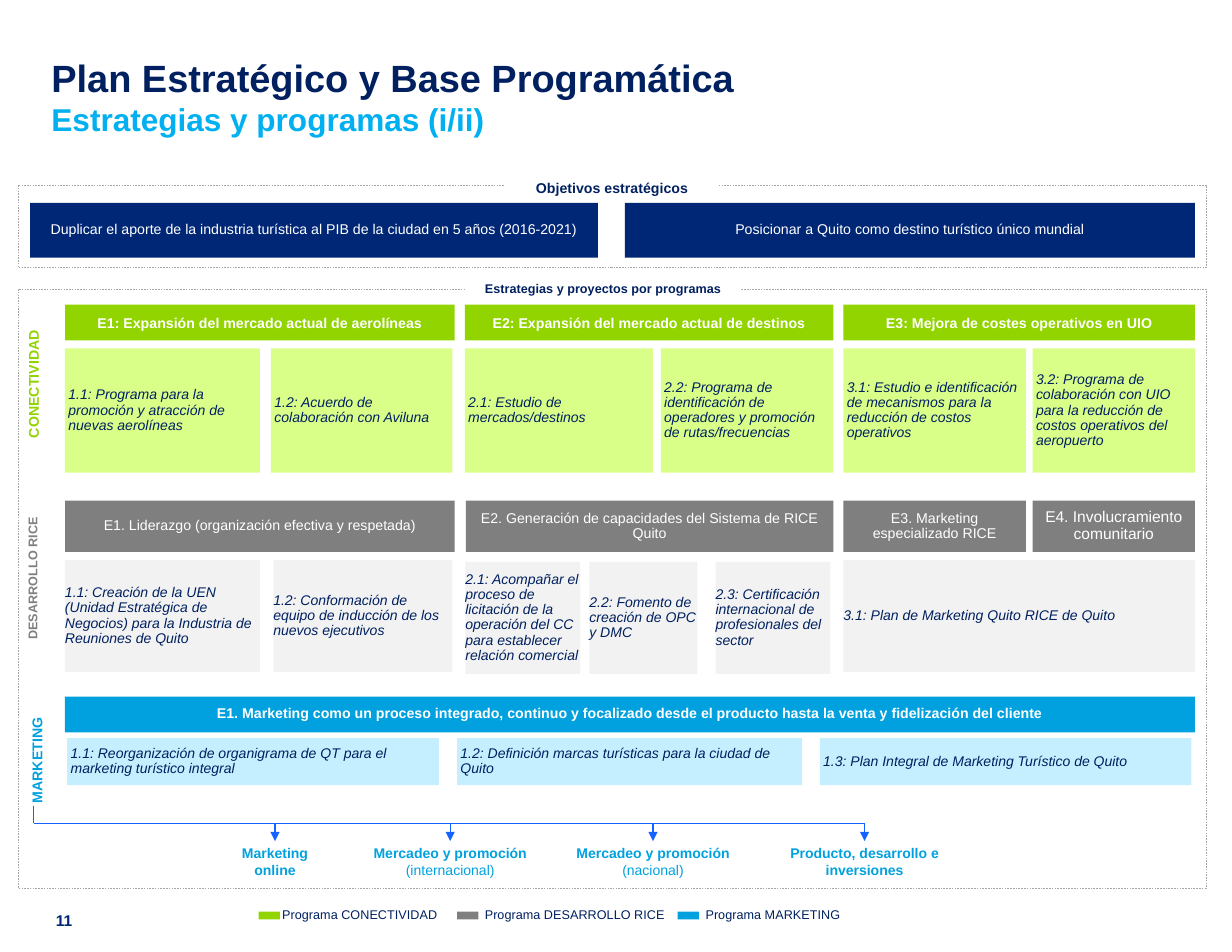
from lxml import etree
from pptx import Presentation
from pptx.dml.color import RGBColor
from pptx.enum.dml import MSO_LINE
from pptx.enum.shapes import MSO_CONNECTOR, MSO_SHAPE
from pptx.enum.text import MSO_ANCHOR, PP_ALIGN
from pptx.oxml.ns import qn
from pptx.util import Pt

RECTANGLE = MSO_SHAPE.RECTANGLE
STRAIGHT = MSO_CONNECTOR.STRAIGHT
LEFT, CENTER = PP_ALIGN.LEFT, PP_ALIGN.CENTER
TOP, MIDDLE = MSO_ANCHOR.TOP, MSO_ANCHOR.MIDDLE

THEME = {
    "font": "Arial",
    "ink": "002060", "navy": "002776", "sky": "00B0F0", "white": "FFFFFF",
    "green": "92D400", "pale_green": "DAFF88",
    "gray": "7F7F7F", "label_gray": "808080", "pale_gray": "F2F2F2",
    "blue": "00A1DE", "pale_blue": "C5EFFF",
    "frame": "A6A6A6", "arrow": "1462FF",
    "title": 24.4, "subtitle": 20.3, "large": 10, "heading": 9.1, "body": 9, "small": 8.1,
}

BASE = {"fill": None, "color": "ink", "size": "body", "bold": False, "italic": False,
        "align": CENTER, "anchor": MIDDLE, "spacing": 0.9, "inset": (2.2, 2.2)}
PROJECT = BASE | {"italic": True, "align": LEFT}
HEADING = BASE | {"color": "white", "size": "heading"}
LABEL = BASE | {"bold": True, "spacing": 1.0, "inset": (4.3, 2.2), "anchor": TOP}
TITLE = BASE | {"bold": True, "align": LEFT, "anchor": TOP, "spacing": 1.0, "inset": (0, 0)}

presentation = Presentation()
presentation.slide_width, presentation.slide_height = Pt(792), Pt(612)
slide = presentation.slides.add_slide(presentation.slide_layouts[6])


def add_box(bounds, paragraphs, style):
    """Add a filled rectangle or, without a fill, a text box.

    Each paragraph is a text or a list of (text, changed style values) runs.
    """
    lengths = [Pt(value) for value in bounds]
    if style["fill"]:
        shape = slide.shapes.add_shape(RECTANGLE, *lengths)
        shape.shadow.inherit = False
        shape.fill.solid()
        shape.fill.fore_color.rgb = RGBColor.from_string(THEME[style["fill"]])
        shape.line.fill.background()
    else:
        shape = slide.shapes.add_textbox(*lengths)
    side, edge = style["inset"]
    frame = shape.text_frame
    settings = {"word_wrap": True, "vertical_anchor": style["anchor"],
                "margin_left": Pt(side), "margin_right": Pt(side),
                "margin_top": Pt(edge), "margin_bottom": Pt(edge)}
    for name, value in settings.items():
        setattr(frame, name, value)
    for index, content in enumerate(paragraphs):
        paragraph = frame.add_paragraph() if index else frame.paragraphs[0]
        paragraph.alignment = style["align"]
        paragraph.line_spacing = style["spacing"]
        runs = [(content, {})] if isinstance(content, str) else content
        for text, changes in runs:
            look = style | changes
            run = paragraph.add_run()
            run.text = text
            font_values = {"name": THEME["font"], "size": Pt(THEME[look["size"]]),
                           "bold": look["bold"], "italic": look["italic"]}
            for name, value in font_values.items():
                setattr(run.font, name, value)
            run.font.color.rgb = RGBColor.from_string(THEME[look["color"]])
    return shape


def add_line(start, end, arrow=False):
    connector = slide.shapes.add_connector(STRAIGHT, *[Pt(value) for value in start + end])
    connector.line.color.rgb = RGBColor.from_string(THEME["arrow"])
    connector.line.width = Pt(0.75)
    if arrow:
        etree.SubElement(connector.line._get_or_add_ln(), qn("a:tailEnd"), type="triangle")
    etree.SubElement(connector._element.spPr, qn("a:effectLst"))


# Title and page number
add_box((33.1, 35.3, 737.3, 50.4),
        [[("Plan Estratégico y Base Programática", {"size": "title"})],
         [("Estrategias y programas (i/ii)", {"size": "subtitle", "color": "sky"})]], TITLE)
add_box((36, 585.4, 24.5, 13), ["11"],
        TITLE | {"size": "large", "color": "navy", "spacing": Pt(12)})

# Dashed frames with their captions
frames = [
    (118.8, 53.3, (324.7, 113, 137.5, 15.8), "Objetivos estratégicos", "heading"),
    (185.8, 385.2, (298.8, 178.6, 177.8, 13.7), "Estrategias y proyectos por programas", "small"),
]
for top, height, caption_bounds, caption, size in frames:
    frame_shape = add_box((11.5, top, 763.9, height), [], BASE | {"fill": "white"})
    frame_shape.line.color.rgb = RGBColor.from_string(THEME["frame"])
    frame_shape.line.width = Pt(0.25)
    frame_shape.line.dash_style = MSO_LINE.DASH
    add_box(caption_bounds, [caption], LABEL | {"fill": "white", "size": size, "anchor": MIDDLE})

# Rows of boxes: style, top, height, then (left, width, text) for each box
OBJECTIVE = HEADING | {"fill": "navy", "inset": (4.3, 2.2)}
GREEN_HEADING = HEADING | {"fill": "green", "bold": True, "spacing": 1.0}
GRAY_HEADING = HEADING | {"fill": "gray"}
BLUE_HEADING = HEADING | {"fill": "blue", "bold": True, "spacing": 0.8}
GREEN_PROJECT = PROJECT | {"fill": "pale_green"}
GRAY_PROJECT = PROJECT | {"fill": "pale_gray", "inset": (0, 2.2)}
BLUE_PROJECT = PROJECT | {"fill": "pale_blue"}
rows = [
    (OBJECTIVE, 130.5, 35.2, [
        (19.4, 365, "Duplicar el aporte de la industria turística al PIB de la ciudad en 5 años (2016-2021)"),
        (401.8, 366.4, "Posicionar a Quito como destino turístico único mundial")]),
    (GREEN_HEADING, 195.8, 23, [
        (41.8, 250.5, "E1: Expansión del mercado actual de aerolíneas"),
        (298.8, 236.9, "E2: Expansión del mercado actual de destinos"),
        (542.2, 226, "E3: Mejora de costes operativos en UIO")]),
    (GREEN_PROJECT, 224, 79.9, [
        (41.8, 125.3, "1.1: Programa para la promoción y atracción de nuevas aerolíneas"),
        (174.2, 116.6, "1.2: Acuerdo de colaboración con Aviluna"),
        (298.8, 121, "2.1: Estudio de mercados/destinos"),
        (424.8, 110.9, "2.2: Programa de identificación de operadores y promoción de rutas/frecuencias"),
        (542.2, 117.4, "3.1: Estudio e identificación de mecanismos para la reducción de costos operativos"),
        (663.8, 104.4, "3.2: Programa de colaboración con UIO para la reducción de costos operativos "
                       "del aeropuerto")]),
    (GRAY_HEADING, 321.8, 33.1, [
        (41.8, 250.5, "E1. Liderazgo (organización efectiva y respetada)"),
        (299.5, 236.2, "E2. Generación de capacidades del Sistema de RICE Quito"),
        (542.2, 117.4, "E3. Marketing especializado RICE")]),
    (GRAY_HEADING | {"size": "large"}, 321.8, 33.1, [
        (663.8, 104.4, "E4. Involucramiento comunitario")]),
    (GRAY_PROJECT, 360, 72, [
        (41.8, 125.3, "1.1: Creación de la UEN (Unidad Estratégica de Negocios) para la Industria "
                      "de Reuniones de Quito"),
        (175.7, 115.2, "1.2: Conformación de equipo de inducción de los nuevos ejecutivos"),
        (542.2, 226, "3.1: Plan de Marketing Quito RICE de Quito")]),
    (GRAY_PROJECT, 361.2, 72, [
        (299.2, 73.8, "2.1: Acompañar el proceso de licitación de la operación del CC para "
                      "establecer relación comercial"),
        (378.9, 69.5, "2.2: Fomento de creación de OPC y DMC"),
        (460, 73.8, "2.3: Certificación internacional de profesionales del sector")]),
    (BLUE_HEADING, 447.8, 23, [
        (41.8, 726.4, "E1. Marketing como un proceso integrado, continuo y focalizado desde el "
                      "producto hasta la venta y fidelización del cliente")]),
    (BLUE_PROJECT, 474.5, 30.2, [
        (43.2, 239, "1.1: Reorganización de organigrama de QT para el marketing turístico integral"),
        (293.8, 221.8, "1.2: Definición marcas turísticas para la ciudad de Quito"),
        (527, 239, "1.3: Plan Integral de Marketing Turístico de Quito")]),
]
for style, top, height, boxes in rows:
    for left, width, text in boxes:
        add_box((left, top, width, height), [text], style)

# Programme names down the left side
side_labels = [
    ((-34.6, 239, 112.3, 15.8), "CONECTIVIDAD", "green", "heading"),
    ((-33.8, 365, 108.7, 13.7), "DESARROLLO RICE", "label_gray", "small"),
    ((-12.2, 481, 72, 15.8), "MARKETING", "blue", "heading"),
]
for bounds, text, color, size in side_labels:
    add_box(bounds, [text], LABEL | {"color": color, "size": size}).rotation = 270

# Marketing branches
stem_x, trunk_y = 21.6, 529.2
branches = [
    (176.8, 64.1, [("Marketing online", {})]),
    (289.4, 123.1, [("Mercadeo y promoción ", {}), ("(internacional)", {"bold": False})]),
    (419.8, 112.3, [("Mercadeo y promoción ", {}), ("(nacional)", {"bold": False})]),
    (555.8, 108, [("Producto, desarrollo e inversiones", {})]),
]
add_line((stem_x, 518.4), (stem_x, trunk_y))
add_line((stem_x, trunk_y), (branches[-1][0], trunk_y))
for center, width, runs in branches:
    add_line((center, trunk_y), (center, 540.7), arrow=True)
    add_box((center - width / 2, 540.7, width, 26.6), [runs], LABEL | {"color": "blue"})

# Legend
legend = [
    (166.3, 177.1, "green", "Programa CONECTIVIDAD"),
    (293.8, 307.4, "gray", "Programa DESARROLLO RICE"),
    (435.6, 449.3, "blue", "Programa MARKETING"),
]
for key_left, text_left, color, text in legend:
    add_box((key_left, 586.1, 13.7, 5), [], BASE | {"fill": color})
    add_box((text_left, 581, 125, 13.7), [text],
            LABEL | {"bold": False, "size": "small", "align": LEFT})

presentation.save("out.pptx")
